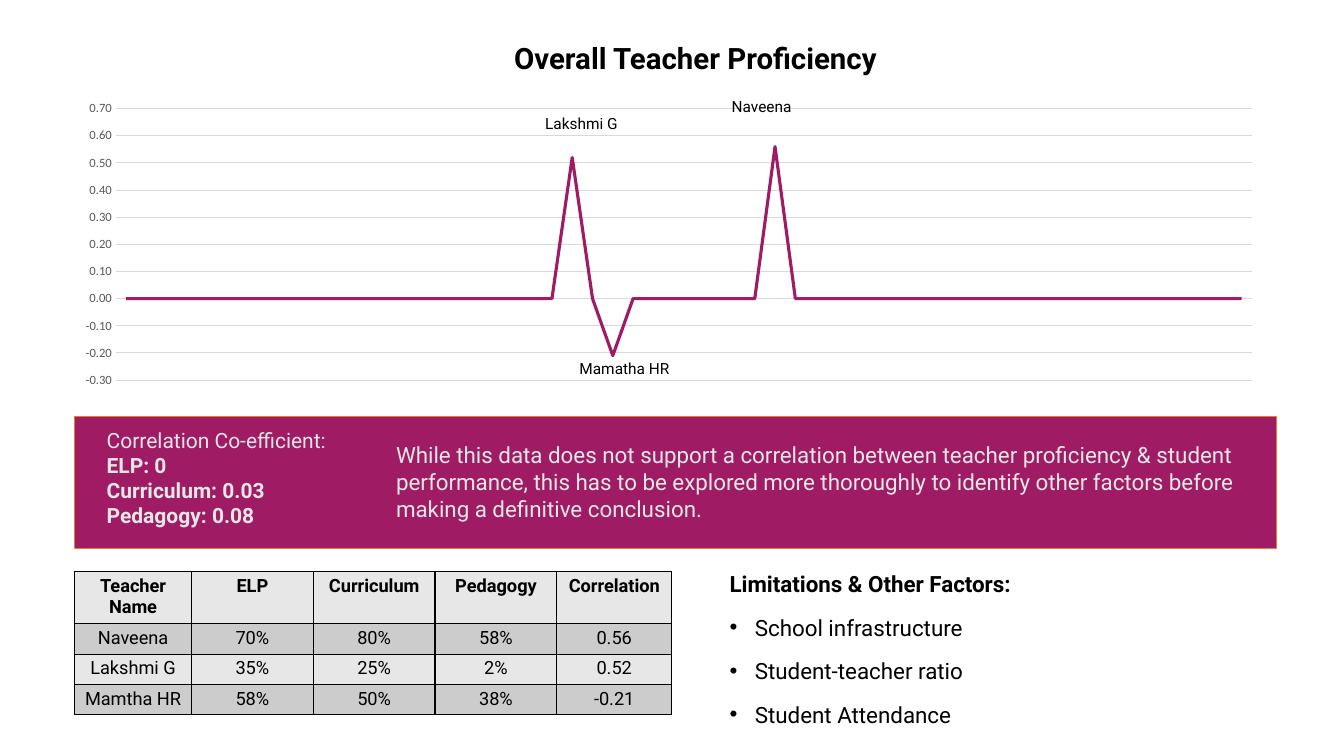
"""Build the slide on overall teacher proficiency."""
import dataclasses

import lxml.etree
import pptx
import pptx.chart.data
import pptx.dml.color
import pptx.enum.chart
import pptx.enum.shapes
import pptx.enum.text
import pptx.oxml.ns
import pptx.util

Pt = pptx.util.Pt
qn = pptx.oxml.ns.qn


@dataclasses.dataclass(frozen=True)
class Theme:
    font: str = "Roboto"
    axis_font: str = "Calibri"
    ink: str = "000000"
    accent: str = "9F1C65"
    accent_edge: str = "E07F2E"
    on_accent: str = "E7E6E6"
    axis: str = "595959"
    grid: str = "D9D9D9"
    bands: tuple = ("E7E7E7", "CCCCCC")
    title: float = 21
    body: float = 16
    coefficient: float = 15
    cell: float = 13
    label: float = 11
    chart: float = 10
    tick: float = 9


def rgb(code):
    return pptx.dml.color.RGBColor.from_string(code)


def add_xml(parent, tag, **attributes):
    return lxml.etree.SubElement(parent, qn(tag), attributes)


class SlideBuilder:
    def __init__(self, slide, theme):
        self.slide = slide
        self.theme = theme

    def set_font(self, font, size, color, bold=False, name=None):
        font.name = name or self.theme.font
        font.size = Pt(size)
        font.bold = bold
        font.color.rgb = rgb(color)

    def add_run(self, paragraph, words, size, color, bold=False):
        run = paragraph.add_run()
        run.text = words
        self.set_font(run.font, size, color, bold)

    def fill_frame(self, frame, lines, size, color, grow=True):
        frame.word_wrap = True
        sizing = pptx.enum.text.MSO_AUTO_SIZE
        frame.auto_size = sizing.SHAPE_TO_FIT_TEXT if grow else sizing.NONE
        frame.vertical_anchor = pptx.enum.text.MSO_ANCHOR.TOP
        for index, (words, bold) in enumerate(lines):
            paragraph = frame.add_paragraph() if index else frame.paragraphs[0]
            paragraph.alignment = pptx.enum.text.PP_ALIGN.LEFT
            self.add_run(paragraph, words, size, color, bold)
        return frame

    def title(self, words, left, top, width, height):
        heading = self.slide.shapes.title
        heading.left, heading.top = Pt(left), Pt(top)
        heading.width, heading.height = Pt(width), Pt(height)
        self.fill_frame(heading.text_frame, [(words, True)], self.theme.title, self.theme.ink)

    def text(self, lines, box, size, color, grow=True):
        frame = self.slide.shapes.add_textbox(*map(Pt, box)).text_frame
        return self.fill_frame(frame, lines, size, color, grow)

    def bullets(self, heading, factors, box):
        lines = [(heading, True)] + [(factor, False) for factor in factors]
        frame = self.text(lines, box, self.theme.body, self.theme.ink, grow=False)
        for index, paragraph in enumerate(frame.paragraphs):
            paragraph.line_spacing = 1.1
            paragraph.space_before = Pt(10)
            if index:
                properties = paragraph._p.get_or_add_pPr()
                properties.set("marL", str(Pt(18)))
                properties.set("indent", str(-Pt(18)))
                add_xml(properties, "a:buFont", typeface="Arial")
                add_xml(properties, "a:buChar", char="•")

    def banner(self, box):
        rectangle = pptx.enum.shapes.MSO_SHAPE.RECTANGLE
        band = self.slide.shapes.add_shape(rectangle, *map(Pt, box))
        band.shadow.inherit = False
        band.fill.solid()
        band.fill.fore_color.rgb = rgb(self.theme.accent)
        band.line.color.rgb = rgb(self.theme.accent_edge)
        band.line.width = Pt(0.75)

    def line_chart(self, values, box, plot):
        theme = self.theme
        data = pptx.chart.data.CategoryChartData(number_format="0.00")
        data.categories = [str(number + 1) for number in range(len(values))]
        data.add_series("Series 1", values)
        kind = pptx.enum.chart.XL_CHART_TYPE.LINE
        chart = self.slide.shapes.add_chart(kind, *map(Pt, box), data).chart
        chart.has_title = False
        chart.has_legend = False
        self.set_font(chart.font, theme.chart, theme.ink, name=theme.axis_font)
        chart.plots[0].vary_by_categories = False
        correlation = chart.plots[0].series[0]
        correlation.smooth = False
        correlation.format.line.color.rgb = rgb(theme.accent)
        correlation.format.line.width = Pt(2.25)
        chart.category_axis.visible = False

        scale = chart.value_axis
        scale.minimum_scale, scale.maximum_scale, scale.major_unit = -0.3, 0.7, 0.1
        scale.major_tick_mark = pptx.enum.chart.XL_TICK_MARK.NONE
        scale.format.line.fill.background()
        scale.major_gridlines.format.line.color.rgb = rgb(theme.grid)
        scale.major_gridlines.format.line.width = Pt(0.75)
        scale.tick_labels.number_format = "0.00"
        scale.tick_labels.number_format_is_linked = False
        self.set_font(scale.tick_labels.font, theme.tick, theme.axis, name=theme.axis_font)

        area = chart._chartSpace.find(".//" + qn("c:plotArea"))
        for automatic in area.findall(qn("c:layout")):
            area.remove(automatic)
        layout = add_xml(area, "c:layout")
        area.insert(0, layout)
        manual = add_xml(layout, "c:manualLayout")
        add_xml(manual, "c:layoutTarget", val="inner")
        add_xml(manual, "c:xMode", val="edge")
        add_xml(manual, "c:yMode", val="edge")
        for side, share in zip("xywh", plot):
            add_xml(manual, "c:" + side, val=str(share))

    def table(self, rows, left, top, widths, heights):
        box = (left, top, sum(widths), sum(heights))
        shape = self.slide.shapes.add_table(len(rows), len(widths), *map(Pt, box))
        grid = shape.table
        for column, width in zip(grid.columns, widths):
            column.width = Pt(width)
        for index, (row, height) in enumerate(zip(rows, heights)):
            grid.rows[index].height = Pt(height)
            for cell, words in zip(grid.rows[index].cells, row):
                self.fill_cell(cell, words, self.theme.bands[index % 2], index == 0)

    def fill_cell(self, cell, words, color, bold):
        cell.margin_left = cell.margin_right = Pt(5.6)
        cell.margin_top = cell.margin_bottom = Pt(2.8)
        paragraph = cell.text_frame.paragraphs[0]
        paragraph.alignment = pptx.enum.text.PP_ALIGN.CENTER
        self.add_run(paragraph, words, self.theme.cell, self.theme.ink, bold)
        properties = cell._tc.get_or_add_tcPr()
        for side in "LRTB":
            border = add_xml(properties, "a:ln" + side, w=str(Pt(1)))
            add_xml(add_xml(border, "a:solidFill"), "a:srgbClr", val=self.theme.ink)
        cell.fill.solid()
        cell.fill.fore_color.rgb = rgb(color)


def main():
    deck = pptx.Presentation()
    deck.slide_width, deck.slide_height = Pt(960), Pt(540)
    theme = Theme()
    page = SlideBuilder(deck.slides.add_slide(deck.slide_layouts[5]), theme)

    peaks = {23: 0.52, 25: -0.21, 33: 0.56}
    correlations = [peaks.get(teacher, 0) for teacher in range(1, 57)]
    page.line_chart(correlations, (48.2, 69.1, 863.3, 213.1), (0.04, 0.04, 0.94, 0.91))
    page.title("Overall Teacher Proficiency", 360, 25.2, 337, 32.4)
    for teacher, left, top in (
        ("Lakshmi G", 382.3, 77.8),
        ("Mamatha HR", 406.8, 252.7),
        ("Naveena", 515.5, 65.5),
    ):
        page.text([(teacher, False)], (left, top, 122.4, 20.9), theme.label, theme.ink)

    page.banner((53.3, 297.4, 858.2, 94.3))
    coefficients = [
        ("Correlation Co-efficient:", False),
        ("ELP: 0", True),
        ("Curriculum: 0.03", True),
        ("Pedagogy: 0.08", True),
    ]
    page.text(coefficients, (69.1, 301.7, 833.8, 79.9), theme.coefficient, theme.on_accent)
    conclusion = (
        "While this data does not support a correlation between teacher proficiency "
        "& student performance, this has to be explored more thoroughly to identify "
        "other factors before making a definitive conclusion."
    )
    page.text([(conclusion, False)], (275.8, 311.8, 614.9, 65.5), theme.body, theme.on_accent)

    scores = [
        ("Teacher Name", "ELP", "Curriculum", "Pedagogy", "Correlation"),
        ("Naveena", "70%", "80%", "58%", "0.56"),
        ("Lakshmi G", "35%", "25%", "2%", "0.52"),
        ("Mamtha HR", "58%", "50%", "38%", "-0.21"),
    ]
    page.table(scores, 53.3, 408.2, [83.5, 87, 87, 87, 82], [37.4] + [21.7] * 3)
    factors = ("School infrastructure", "Student-teacher ratio", "Student Attendance")
    page.bullets("Limitations & Other Factors:", factors, (514.1, 401.8, 363.6, 160.6))
    deck.save("out.pptx")


if __name__ == "__main__":
    main()
